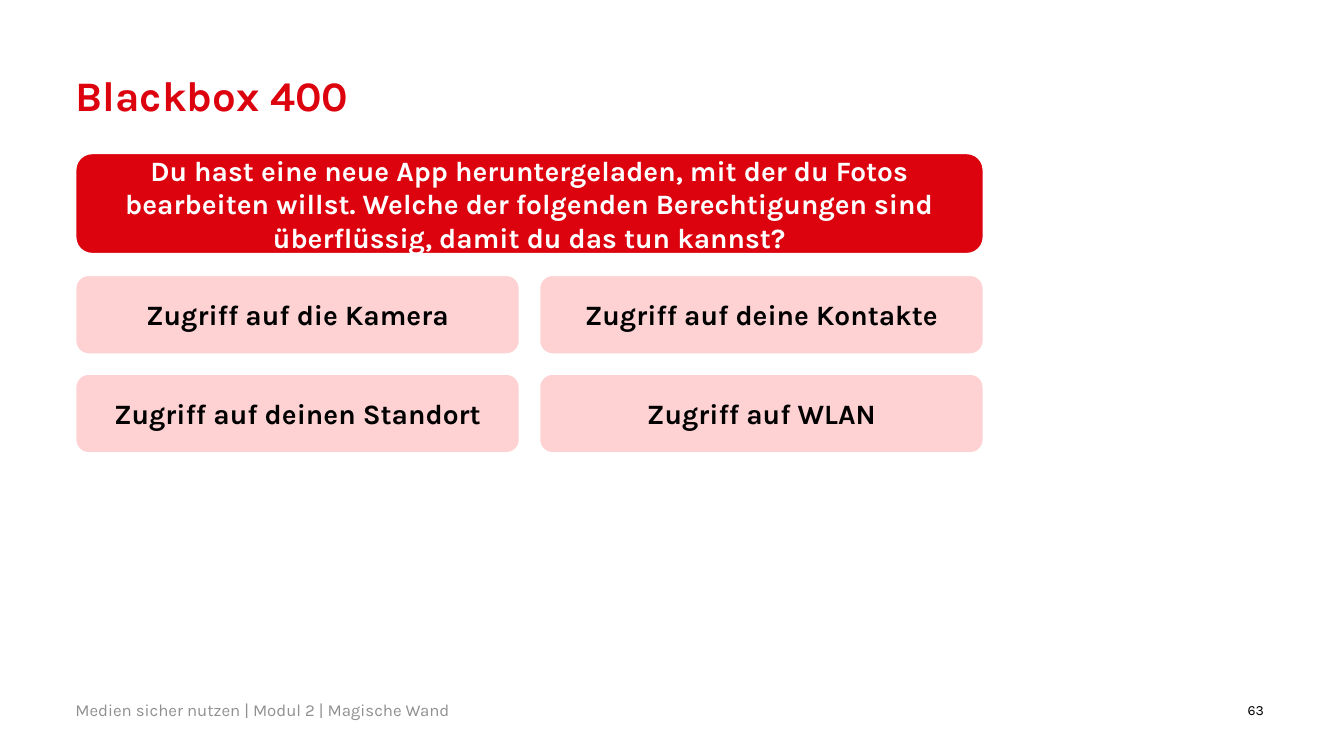
from lxml import etree
from pptx import Presentation
from pptx.dml.color import RGBColor
from pptx.enum.shapes import MSO_SHAPE
from pptx.enum.text import MSO_ANCHOR, PP_ALIGN
from pptx.oxml.ns import qn
from pptx.util import Cm, Pt

ROUNDED = MSO_SHAPE.ROUNDED_RECTANGLE
TOP, MIDDLE = MSO_ANCHOR.TOP, MSO_ANCHOR.MIDDLE
LEFT, CENTER, RIGHT = PP_ALIGN.LEFT, PP_ALIGN.CENTER, PP_ALIGN.RIGHT

TITLE = "Blackbox 400"
QUESTION = (
    "Du hast eine neue App heruntergeladen, mit der du Fotos bearbeiten willst. "
    "Welche der folgenden Berechtigungen sind überflüssig, damit du das tun kannst?"
)
ANSWERS = [
    ["Zugriff auf die Kamera", "Zugriff auf deine Kontakte"],
    ["Zugriff auf deinen Standort", "Zugriff auf WLAN"],
]
FOOTER = "Medien sicher nutzen | Modul 2 | Magische Wand"
PAGE_NUMBER = "63"

FONT = "Karla"
COLORS = {
    "red": "DC020E",
    "pink": "FEC6C9",
    "white": "FFFFFF",
    "black": "000000",
    "gray": "909090",
}

MARGIN = 1.9
QUESTION_TOP, QUESTION_WIDTH, QUESTION_HEIGHT = 3.86, 22.89, 2.54
ANSWERS_TOP, ANSWER_WIDTH, ANSWER_HEIGHT = 6.93, 11.2, 2.0
GAP = QUESTION_WIDTH - 2 * ANSWER_WIDTH
FOOTER_TOP, FOOTER_HEIGHT = 17.68, 0.41


def rgb(color):
    return RGBColor.from_string(COLORS[color])


def write(frame, text, size, color, align, anchor, bold=False):
    frame.word_wrap = True
    frame.vertical_anchor = anchor
    paragraph = frame.paragraphs[0]
    paragraph.alignment = align
    run = paragraph.add_run()
    run.text = text
    run.font.name = FONT
    run.font.size = Pt(size)
    run.font.bold = bold
    run.font.color.rgb = rgb(color)
    return paragraph


def add_label(slide, box, text, size, color, align=LEFT, anchor=MIDDLE, bold=False):
    frame = slide.shapes.add_textbox(*map(Cm, box)).text_frame
    frame.margin_left = frame.margin_right = 0
    frame.margin_top = frame.margin_bottom = 0
    return write(frame, text, size, color, align, anchor, bold)


def add_card(slide, box, text, fill, color, opacity=100):
    card = slide.shapes.add_shape(ROUNDED, *map(Cm, box))
    card.shadow.inherit = False
    card.fill.solid()
    card.fill.fore_color.rgb = rgb(fill)
    if opacity < 100:
        tint = card.fill._xPr.find(qn("a:solidFill"))[0]
        etree.SubElement(tint, qn("a:alpha")).set("val", str(opacity * 1000))
    card.line.color.rgb = rgb("white")
    card.line.width = Pt(1.5)
    write(card.text_frame, text, 20, color, CENTER, MIDDLE, bold=True)


def main():
    deck = Presentation()
    deck.slide_width, deck.slide_height = Cm(33.87), Cm(19.05)
    slide = deck.slides.add_slide(deck.slide_layouts[6])

    title = add_label(slide, (MARGIN, MARGIN, 30, 1.09), TITLE, 30, "red",
                      anchor=TOP, bold=True)
    title.line_spacing = 0.9
    add_label(slide, (MARGIN, FOOTER_TOP, 25, FOOTER_HEIGHT), FOOTER, 12, "gray")
    add_label(slide, (30.07, FOOTER_TOP, 1.78, FOOTER_HEIGHT), PAGE_NUMBER, 10,
              "black", align=RIGHT)

    add_card(slide, (MARGIN, QUESTION_TOP, QUESTION_WIDTH, QUESTION_HEIGHT),
             QUESTION, "red", "white")
    for row, answers in enumerate(ANSWERS):
        for column, answer in enumerate(answers):
            left = MARGIN + column * (ANSWER_WIDTH + GAP)
            top = ANSWERS_TOP + row * (ANSWER_HEIGHT + GAP)
            add_card(slide, (left, top, ANSWER_WIDTH, ANSWER_HEIGHT),
                     answer, "pink", "black", opacity=80)

    deck.save("out.pptx")


if __name__ == "__main__":
    main()
